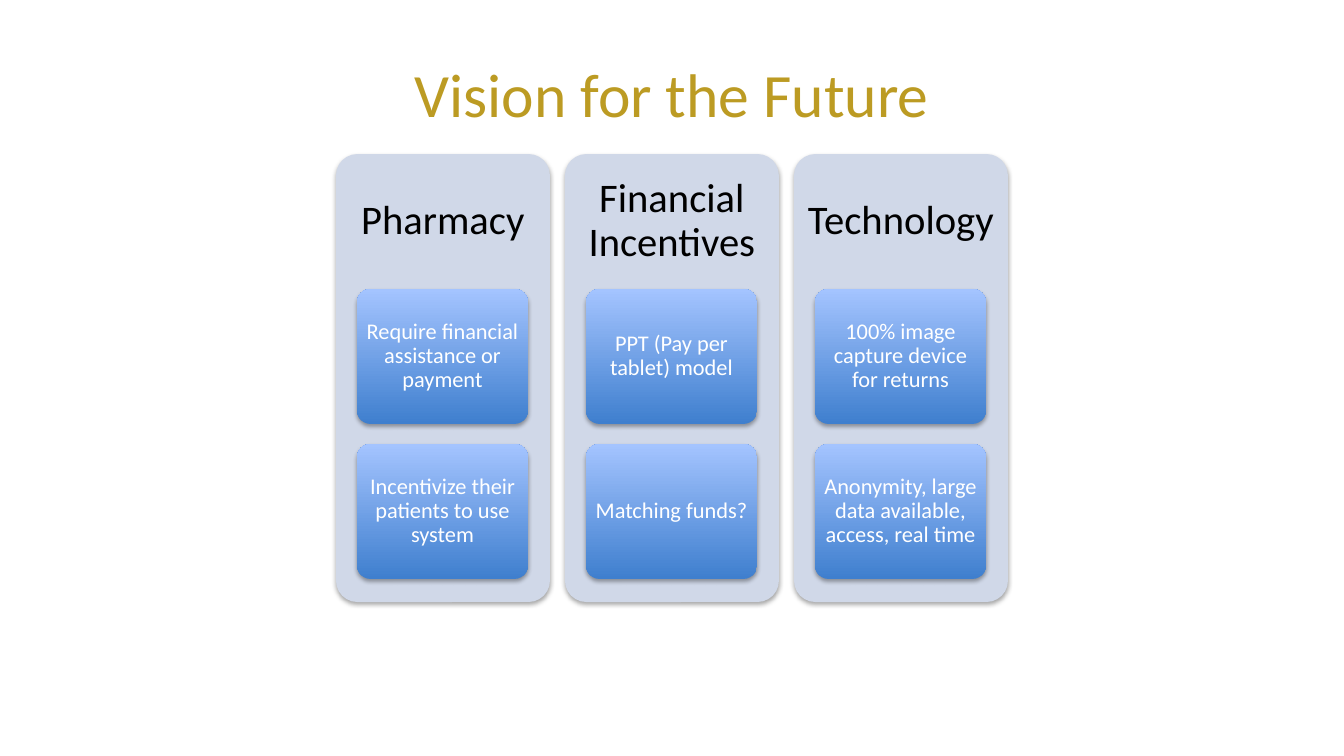
from lxml import etree
from pptx import Presentation
from pptx import util as u
from pptx.dml.color import RGBColor
from pptx.enum import shapes, text
from pptx.oxml import ns

GOLD = RGBColor(0xBC, 0x9B, 0x23)
PANEL = RGBColor(0xD0, 0xD8, 0xE8)
CARD_BOTTOM = RGBColor(0x3F, 0x7F, 0xCE)
CARD_TOP = RGBColor(0xA4, 0xC4, 0xFF)
BLACK = RGBColor(0, 0, 0)
WHITE = RGBColor(0xFF, 0xFF, 0xFF)

COLUMNS = [
    ("Pharmacy", ["Require financial assistance or payment",
                  "Incentivize their patients to use system"]),
    ("Financial Incentives", ["PPT (Pay per tablet) model",
                              "Matching funds?"]),
    ("Technology", ["100% image capture device for returns",
                    "Anonymity, large data available, access, real time"]),
]
COLUMN_LEFT, COLUMN_TOP, COLUMN_PITCH = 336, 154, 229
COLUMN_WIDTH, COLUMN_HEIGHT, HEADING_HEIGHT = 214, 448, 134
CARD_INDENT, CARD_TOP_EDGE, CARD_PITCH = 21, 289, 155
CARD_WIDTH, CARD_HEIGHT = 171, 135


def px(length):
    return u.Emu(round(length * 914400 / 100.8))


def write(box, words, size, color, inset=(10, 5), spacing=0.9):
    frame = box.text_frame
    frame.word_wrap = True
    frame.vertical_anchor = text.MSO_ANCHOR.MIDDLE
    frame.margin_left = frame.margin_right = px(inset[0])
    frame.margin_top = frame.margin_bottom = px(inset[1])
    para = frame.paragraphs[0]
    para.alignment = text.PP_ALIGN.CENTER
    para.line_spacing = spacing
    span = para.add_run()
    span.text = words
    span.font.name = "Calibri"
    span.font.size = u.Pt(size)
    span.font.color.rgb = color


def add_shadow(box):
    box.shadow.inherit = False
    effects = box._element.spPr.find(ns.qn("a:effectLst"))
    shadow = etree.SubElement(effects, ns.qn("a:outerShdw"), blurRad="40000",
                              dist="23000", dir="5400000", rotWithShape="0")
    color = etree.SubElement(shadow, ns.qn("a:srgbClr"), val="000000")
    etree.SubElement(color, ns.qn("a:alpha"), val="35000")


def add_rounded(page, left, top, width, height):
    box = page.shapes.add_shape(shapes.MSO_SHAPE.ROUNDED_RECTANGLE,
                                px(left), px(top), px(width), px(height))
    box.adjustments[0] = 0.1
    box.line.fill.background()
    add_shadow(box)
    return box


def add_card(page, left, top, words):
    card = add_rounded(page, left, top, CARD_WIDTH, CARD_HEIGHT)
    card.fill.gradient()
    card.fill.gradient_angle = 90
    for stop, position, color in zip(card.fill.gradient_stops, (0, 1),
                                     (CARD_BOTTOM, CARD_TOP)):
        stop.position = position
        stop.color.rgb = color
    write(card, words, 16, WHITE, inset=(4, 3))


def add_column(page, left, heading, cards):
    panel = add_rounded(page, left, COLUMN_TOP, COLUMN_WIDTH, COLUMN_HEIGHT)
    panel.fill.solid()
    panel.fill.fore_color.rgb = PANEL
    box = page.shapes.add_textbox(px(left), px(COLUMN_TOP),
                                  px(COLUMN_WIDTH), px(HEADING_HEIGHT))
    write(box, heading, 29, BLACK, inset=(12, 12))
    for row, words in enumerate(cards):
        add_card(page, left + CARD_INDENT, CARD_TOP_EDGE + row * CARD_PITCH, words)


def add_title(page, words):
    title = page.shapes.title
    title.left, title.top = px(67), px(30)
    title.width, title.height = px(1210), px(126)
    write(title, words, 44, GOLD, spacing=1.0)


def main():
    deck = Presentation()
    deck.slide_width, deck.slide_height = px(1344), px(756)
    page = deck.slides.add_slide(deck.slide_layouts[5])
    add_title(page, "Vision for the Future")
    for index, (heading, cards) in enumerate(COLUMNS):
        add_column(page, COLUMN_LEFT + index * COLUMN_PITCH, heading, cards)
    deck.save("out.pptx")


if __name__ == "__main__":
    main()
